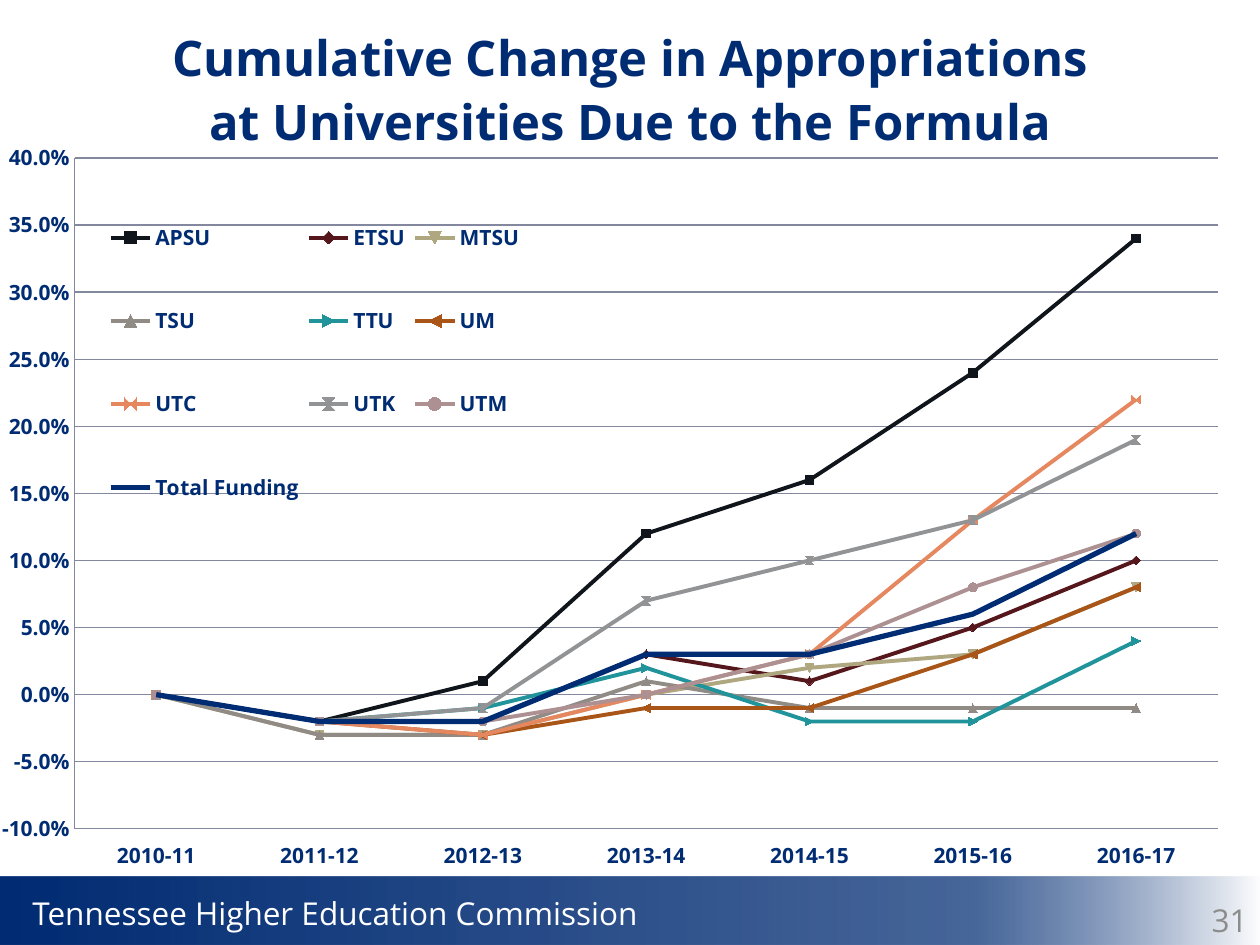
from pptx import Presentation
from pptx.chart.data import CategoryChartData as Data
from pptx.dml.color import RGBColor as RGB
from pptx.enum.chart import XL_CHART_TYPE as Kind, XL_LEGEND_POSITION as Spot
from pptx.enum.chart import XL_TICK_LABEL_POSITION as Label, XL_TICK_MARK as Tick
from pptx.enum.shapes import MSO_SHAPE as Form
from pptx.enum.text import MSO_ANCHOR as Anchor, MSO_AUTO_SIZE as Fit, PP_ALIGN as Align
from pptx.oxml import parse_xml
from pptx.util import Pt

PX = 7257
WIDE, HIGH = 1258, 746
NAVY, GRID, FACE = "002C73", "84889F", "Open Sans"


def hue(code):
    return RGB.from_string(code)


def write(box, text, size=18, color="FFFFFF", bold=False, align=Align.LEFT, wrap=True, gap=0):
    frame = box.text_frame
    frame.auto_size = Fit.NONE
    frame.word_wrap = wrap
    frame.vertical_anchor = Anchor.TOP
    frame.text = text
    for i, par in enumerate(frame.paragraphs):
        par.alignment = align
        par.line_spacing = 1.0
        par.space_before = Pt(gap if i else 0)
        font = par.font
        font.name, font.size, font.bold = FACE, Pt(size), bold
        font.color.rgb = hue(color)


deck = Presentation()
deck.slide_width, deck.slide_height = 1260 * PX, 945 * PX
slide = deck.slides.add_slide(deck.slide_layouts[5])
shapes = slide.shapes

band = shapes.add_shape(Form.RECTANGLE, 0, 877 * PX, 1262 * PX, 68 * PX)
band.shadow.inherit = False
band.line.fill.background()
stops = "".join(
    f'<a:gs pos="{pos}000"><a:srgbClr val="{code}"><a:alpha val="{alpha}000"/></a:srgbClr></a:gs>'
    for pos, code, alpha in [(0, NAVY, 100), (77, NAVY, 72), (100, "FFFFFF", 100)]
)
fade = parse_xml(
    '<a:gradFill xmlns:a="http://schemas.openxmlformats.org/drawingml/2006/main" rotWithShape="1">'
    f'<a:gsLst>{stops}</a:gsLst><a:lin ang="0" scaled="0"/></a:gradFill>'
)
band._element.spPr.find("{*}prstGeom").addnext(fade)

name = shapes.add_textbox(20 * PX, 888 * PX, 636 * PX, 50 * PX)
write(name, "Tennessee Higher Education Commission", wrap=False)
page = shapes.add_textbox(966 * PX, 895 * PX, 294 * PX, 50 * PX)
write(page, "31", color="8C8C8C", align=Align.RIGHT)

title = shapes.title
title.left, title.top, title.width, title.height = 0, 21 * PX, 1260 * PX, 105 * PX
write(title, "Cumulative Change in Appropriations\nat Universities Due to the Formula",
      size=28, color=NAVY, bold=True, align=Align.CENTER, gap=3)

rows = [
    ("APSU", "10151C", [0, -0.02, 0.01, 0.12, 0.16, 0.24, 0.34]),
    ("ETSU", "55171B", [0, -0.02, -0.02, 0.03, 0.01, 0.05, 0.1]),
    ("MTSU", "AFA780", [0, -0.03, -0.03, 0, 0.02, 0.03, 0.08]),
    ("TSU", "918B86", [0, -0.03, -0.03, 0.01, -0.01, -0.01, -0.01]),
    ("TTU", "20949A", [0, -0.02, -0.01, 0.02, -0.02, -0.02, 0.04]),
    ("UM", "A85517", [0, -0.02, -0.03, -0.01, -0.01, 0.03, 0.08]),
    ("UTC", "E58860", [0, -0.02, -0.03, 0, 0.03, 0.13, 0.22]),
    ("UTK", "929395", [0, -0.02, -0.01, 0.07, 0.1, 0.13, 0.19]),
    ("UTM", "AD9092", [0, -0.02, -0.02, 0, 0.03, 0.08, 0.12]),
    ("Total Funding", NAVY, [0, -0.02, -0.02, 0.03, 0.03, 0.06, 0.12]),
]
data = Data(number_format="0.0%")
data.categories = [f"{year}-{year - 1999}" for year in range(2010, 2017)]
for label, code, vals in rows:
    data.add_series(label, vals)
chart = shapes.add_chart(Kind.LINE_MARKERS, 2 * PX, 126 * PX, WIDE * PX, HIGH * PX, data).chart
chart.has_title = False
chart.font.name, chart.font.size = FACE, Pt(10)
chart.font.color.rgb = hue(NAVY)
plot = chart.plots[0]
plot.vary_by_categories = False

for line, (label, code, vals) in zip(plot.series, rows):
    total = label == "Total Funding"
    line.smooth = False
    line.format.line.color.rgb = hue(code)
    line.format.line.width = Pt(3 if total else 2.25)
    if total:
        mark = parse_xml('<c:symbol xmlns:c="http://schemas.openxmlformats.org/drawingml/2006/chart" val="none"/>')
        line._element.get_or_add_marker().insert(0, mark)
    else:
        line.marker.size = 5
        line.marker.format.fill.solid()
        line.marker.format.fill.fore_color.rgb = hue(code)
        line.marker.format.line.color.rgb = hue(code)

years, rate = chart.category_axis, chart.value_axis
chart.has_legend = True
key = chart.legend
key.position, key.include_in_layout = Spot.LEFT, False
for part in (years, rate, key):
    font = part.font if part is key else part.tick_labels.font
    font.name, font.size, font.bold = FACE, Pt(12), True
    font.color.rgb = hue(NAVY)
for axis in (years, rate):
    axis.major_tick_mark = axis.minor_tick_mark = Tick.NONE
    axis.format.line.color.rgb = hue(GRID)
years.tick_label_position = Label.LOW
rate.minimum_scale, rate.maximum_scale, rate.major_unit = -0.1, 0.4, 0.05
rate.tick_labels.number_format = "0.0%"
rate.tick_labels.number_format_is_linked = False
rate.has_major_gridlines = True
rate.major_gridlines.format.line.color.rgb = hue(GRID)
rate.major_gridlines.format.line.width = Pt(0.75)

area = chart._chartSpace.chart.plotArea
for host, inner, spots in [(area, True, (72, 32, 1144, 671)), (key._element, False, (98, 43, 429, 387))]:
    for old in host.findall("{*}layout"):
        host.remove(old)
    target = '<c:layoutTarget val="inner"/>' if inner else ""
    modes = '<c:xMode val="edge"/><c:yMode val="edge"/>'
    sizes = "".join(
        f'<c:{side} val="{val / span}"/>' for side, val, span in zip("xywh", spots, (WIDE, HIGH) * 2)
    )
    layout = parse_xml(
        '<c:layout xmlns:c="http://schemas.openxmlformats.org/drawingml/2006/chart">'
        f"<c:manualLayout>{target}{modes}{sizes}</c:manualLayout></c:layout>"
    )
    host.insert(0 if inner else 1, layout)

deck.save("out.pptx")
